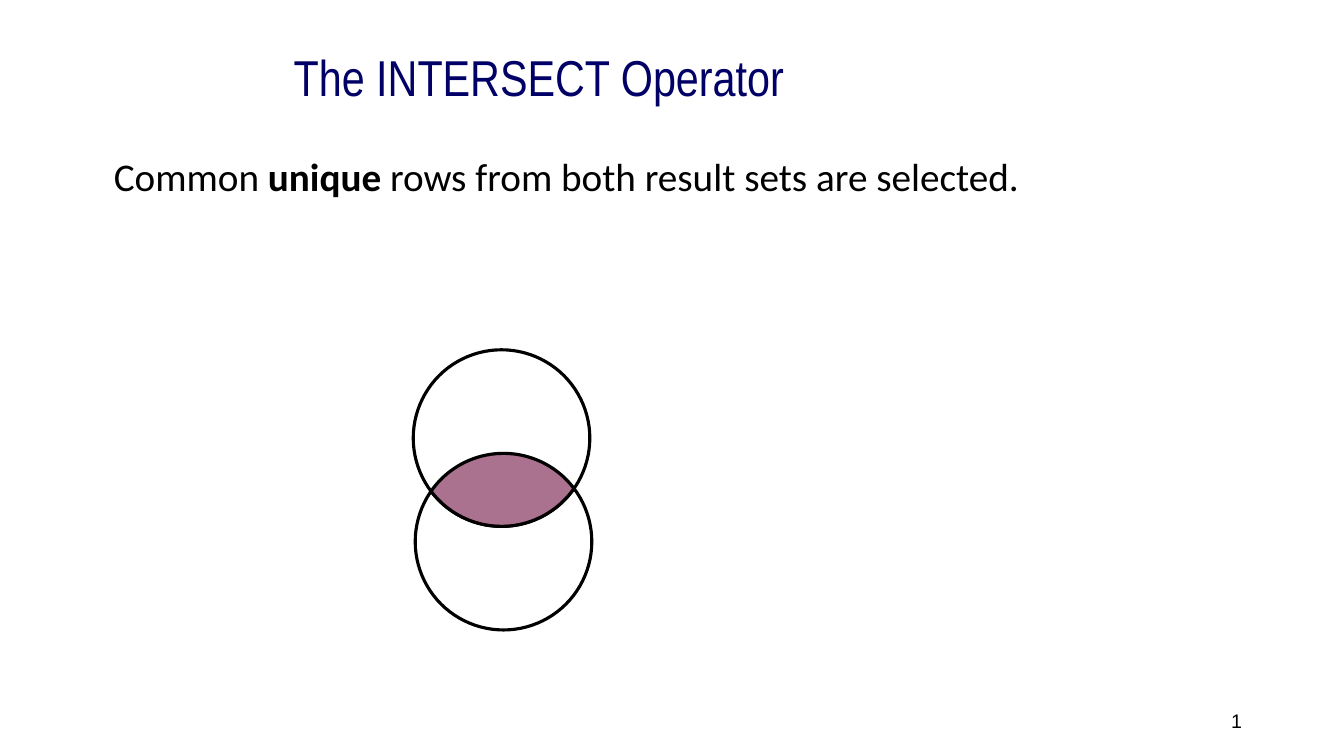
from math import acos, atan2, cos, hypot, sin

from lxml.etree import SubElement
from pptx import Presentation
from pptx.dml.color import RGBColor
from pptx.enum.shapes import MSO_SHAPE
from pptx.enum.text import MSO_ANCHOR, PP_ALIGN
from pptx.oxml.ns import qn
from pptx.util import Cm, Pt

COLORS = {"title": "000066", "text": "000000", "line": "000000",
          "circle": "FFFFFF", "overlap": "954F72"}
DIAMETER = 4.45
RADIUS = DIAMETER / 2
UPPER = (12.64, 11.04)
LOWER = (12.69, 13.65)
ARC_STEPS = 48


def color(name):
    return RGBColor.from_string(COLORS[name])


def add_text(slide, box, runs, size, font, ink="text", align=PP_ALIGN.LEFT,
             anchor=MSO_ANCHOR.TOP, spacing=None, before=0, indent=0, inset=None):
    """Add one paragraph; runs is a list of (text, bold) pairs."""
    frame = slide.shapes.add_textbox(*map(Cm, box)).text_frame
    frame.word_wrap = True
    frame.vertical_anchor = anchor
    if inset is not None:
        frame.margin_left = frame.margin_right = Cm(inset)
        frame.margin_top = frame.margin_bottom = Cm(inset)
    paragraph = frame.paragraphs[0]
    paragraph.alignment = align
    paragraph.line_spacing = spacing
    paragraph.space_before = Pt(before)
    paragraph_properties = paragraph._p.get_or_add_pPr()
    paragraph_properties.set("marL", str(Cm(indent)))
    paragraph_properties.set("indent", "0")
    for text, bold in runs:
        run = paragraph.add_run()
        run.text = text
        run.font.name = font
        run.font.size = Pt(size)
        run.font.bold = bold
        run.font.color.rgb = color(ink)


def style_shape(shape, fill=None, opacity=100, outlined=True):
    shape.shadow.inherit = False
    if fill:
        shape.fill.solid()
        shape.fill.fore_color.rgb = color(fill)
        if opacity < 100:
            fill_color = shape._element.spPr.find(qn("a:solidFill"))[0]
            SubElement(fill_color, qn("a:alpha")).set("val", str(opacity * 1000))
    else:
        shape.fill.background()
    if outlined:
        shape.line.color.rgb = color("line")
        shape.line.width = Pt(2.25)
    else:
        shape.line.fill.background()


def add_circle(slide, center, **style):
    x, y = center
    circle = slide.shapes.add_shape(MSO_SHAPE.OVAL, Cm(x - RADIUS), Cm(y - RADIUS),
                                    Cm(DIAMETER), Cm(DIAMETER))
    style_shape(circle, **style)


def arc_inside(center, other):
    """Return the points of one circle that lie within the other."""
    dx, dy = other[0] - center[0], other[1] - center[1]
    middle = atan2(dy, dx)
    half = acos(hypot(dx, dy) / DIAMETER)
    angles = [middle + half * (2 * step / ARC_STEPS - 1) for step in range(ARC_STEPS + 1)]
    return [(Cm(center[0] + RADIUS * cos(angle)), Cm(center[1] + RADIUS * sin(angle)))
            for angle in angles]


def add_overlap(slide, first, second):
    points = arc_inside(first, second) + arc_inside(second, first)
    builder = slide.shapes.build_freeform(*points[0])
    builder.add_line_segments(points[1:], close=True)
    style_shape(builder.convert_to_shape(), fill="overlap", opacity=80)


def main():
    presentation = Presentation()
    presentation.slide_width = Cm(33.87)
    presentation.slide_height = Cm(19.05)
    slide = presentation.slides.add_slide(presentation.slide_layouts[6])

    add_text(slide, (23.93, 17.65, 7.62, 1.02), [("1", False)], 14, "Arial",
             align=PP_ALIGN.RIGHT, anchor=MSO_ANCHOR.MIDDLE)
    add_text(slide, (6.76, 1.83, 22.89, 1.8), [("The INTERSECT Operator", False)],
             36, "Arial Narrow", ink="title", spacing=Pt(24), indent=0.64, inset=0)
    add_text(slide, (2.62, 3.84, 29.21, 1.37),
             [("Common ", False), ("unique", True),
              (" rows from both result sets are selected.", False)],
             28, "Calibri", spacing=0.9, before=7.5)

    add_circle(slide, LOWER, fill="circle")
    add_circle(slide, UPPER, fill="circle", opacity=80, outlined=False)
    add_circle(slide, UPPER)
    add_overlap(slide, UPPER, LOWER)

    presentation.save("out.pptx")


if __name__ == "__main__":
    main()
